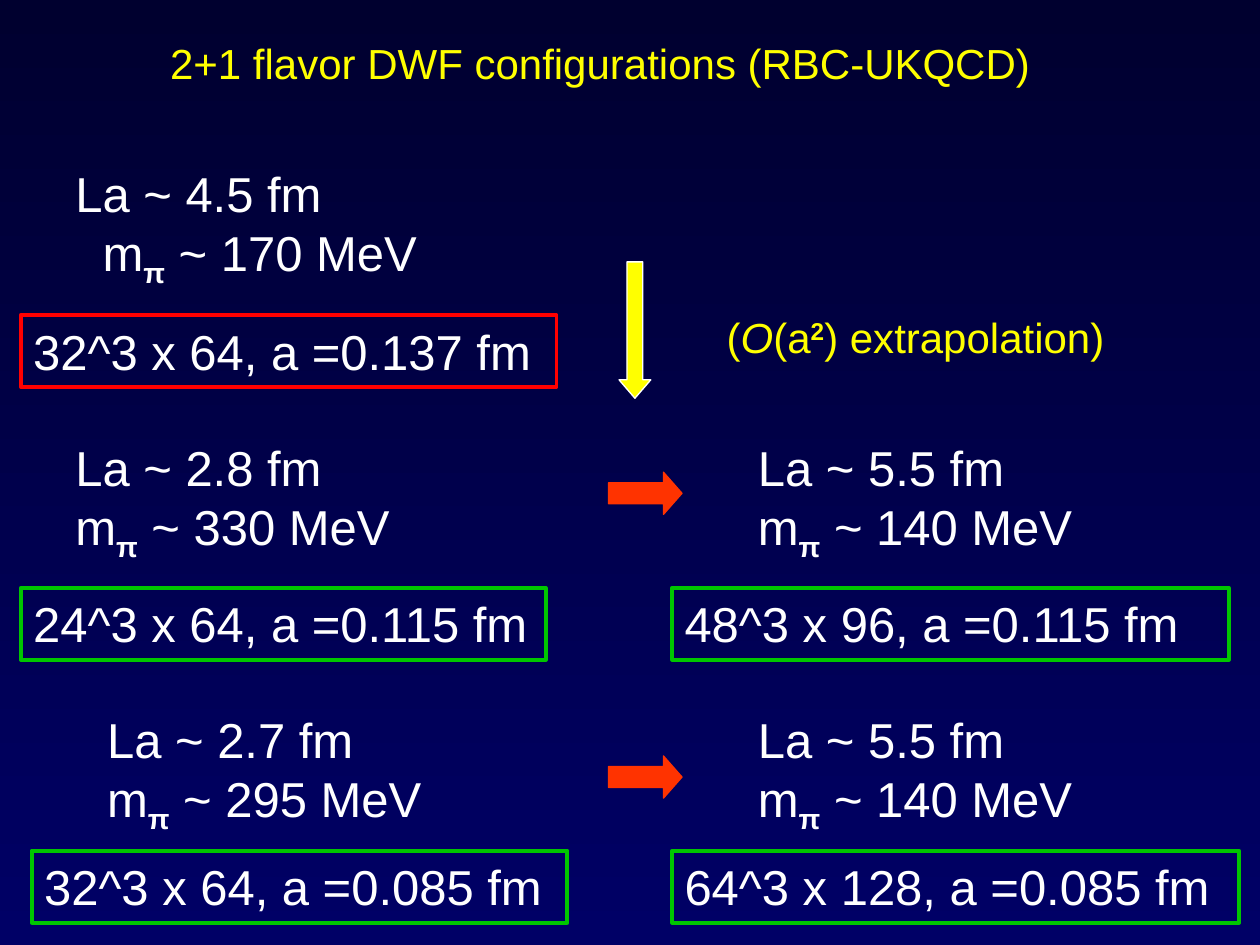
from pptx import Presentation
from pptx.dml.color import RGBColor
from pptx.enum.shapes import MSO_SHAPE
from pptx.enum.text import MSO_ANCHOR, PP_ALIGN
from pptx.util import Cm, Pt

COLORS = {
    "top": "00002F",
    "bottom": "000066",
    "text": "FFFFFF",
    "accent": "FFFF00",
    "final": "00C600",
    "coarse": "FF0000",
    "arrow": "FF3300",
}


def color(name):
    return RGBColor.from_string(COLORS[name])


def write(frame, lines, size, color_name):
    frame.word_wrap = True
    frame.vertical_anchor = MSO_ANCHOR.TOP
    for index, line in enumerate(lines):
        para = frame.paragraphs[0] if index == 0 else frame.add_paragraph()
        para.alignment = PP_ALIGN.LEFT
        for text, style in line:
            span = para.add_run()
            span.text = text
            span.font.name = "Arial"
            span.font.size = Pt(size)
            span.font.color.rgb = color(color_name)
            span.font.italic = style == "italic"
            span.font.bold = style in ("sub", "super")
            if span.font.bold:
                baseline = "-25000" if style == "sub" else "30000"
                span.font._element.set("baseline", baseline)


deck = Presentation()
deck.slide_width = Cm(25.4)
deck.slide_height = Cm(19.05)
page = deck.slides.add_slide(deck.slide_layouts[6])

backdrop = page.background.fill
backdrop.gradient()
backdrop.gradient_angle = 270
for stop, name in zip(backdrop.gradient_stops, ("top", "bottom")):
    stop.color.rgb = color(name)

headings = [
    (3.18, 0.64, 18.62, [("2+1 flavor DWF configurations (RBC-UKQCD)", "")]),
    (14.4, 6.15, 8.89, [("(", ""), ("O", "italic"), ("(a", ""), ("2", "super"), (") extrapolation)", "")]),
]
for left, top, width, line in headings:
    box = page.shapes.add_textbox(Cm(left), Cm(top), Cm(width), Cm(1.27))
    write(box.text_frame, [line], 24, "accent")

masses = [
    (1.27, 3.18, "4.5", "170"),
    (1.27, 8.69, "2.8", "330"),
    (15.03, 8.69, "5.5", "140"),
    (1.91, 14.18, "2.7", "295"),
    (15.03, 14.18, "5.5", "140"),
]
for left, top, extent, mass in masses:
    box = page.shapes.add_textbox(Cm(left), Cm(top), Cm(9), Cm(2.64))
    lines = [
        [(f"La ~ {extent} fm", "")],
        [("m", ""), ("π", "sub"), (f" ~ {mass} MeV", "")],
    ]
    write(box.text_frame, lines, 28, "text")
    if mass == "170":
        box.text_frame.paragraphs[1]._p.get_or_add_pPr().set("marL", str(Cm(0.55)))

lattices = [
    (0.42, 6.35, 10.8, "32^3 x 64, a =0.137 fm", "coarse"),
    (0.42, 11.85, 10.58, "24^3 x 64, a =0.115 fm", "final"),
    (13.55, 11.85, 11.22, "48^3 x 96, a =0.115 fm", "final"),
    (0.64, 17.15, 10.8, "32^3 x 64, a =0.085 fm", "final"),
    (13.55, 17.15, 11.43, "64^3 x 128, a =0.085 fm", "final"),
]
for left, top, width, text, outline in lattices:
    box = page.shapes.add_shape(MSO_SHAPE.RECTANGLE, Cm(left), Cm(top), Cm(width), Cm(1.45))
    box.shadow.inherit = False
    box.fill.background()
    box.line.color.rgb = color(outline)
    box.line.width = Pt(2.25)
    write(box.text_frame, [[(text, "")]], 28, "text")

arrows = [
    (MSO_SHAPE.DOWN_ARROW, 12.48, 5.28, 0.64, 2.75, 0.58, "accent", "text"),
    (MSO_SHAPE.RIGHT_ARROW, 12.27, 9.52, 1.48, 0.85, 0.44, "arrow", "arrow"),
    (MSO_SHAPE.RIGHT_ARROW, 12.27, 15.24, 1.48, 0.85, 0.44, "arrow", "arrow"),
]
for kind, left, top, width, height, head, fill, outline in arrows:
    arrow = page.shapes.add_shape(kind, Cm(left), Cm(top), Cm(width), Cm(height))
    arrow.shadow.inherit = False
    arrow.adjustments[1] = head
    arrow.fill.solid()
    arrow.fill.fore_color.rgb = color(fill)
    arrow.line.color.rgb = color(outline)
    arrow.line.width = Pt(0.75)

deck.save("out.pptx")
